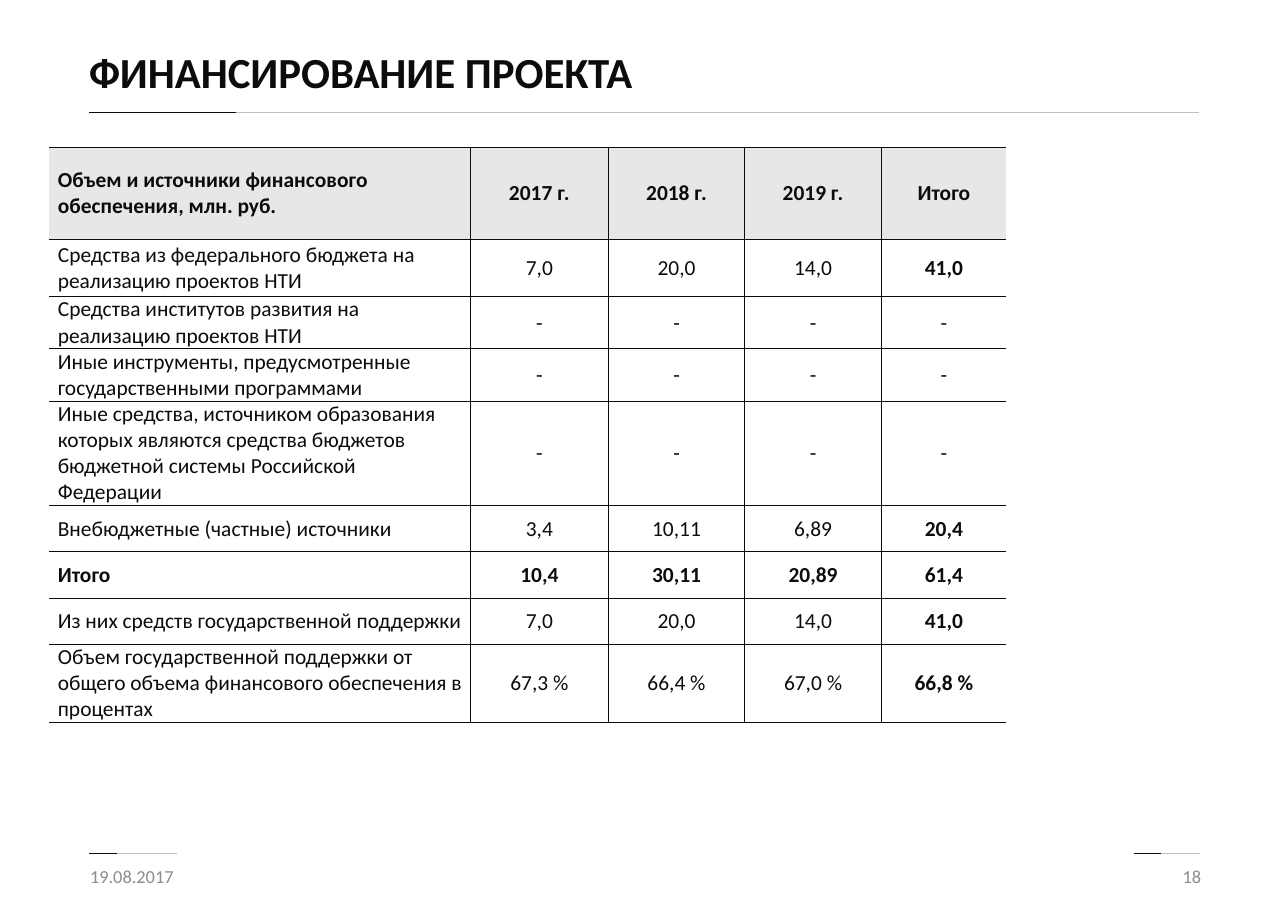
from lxml import etree
from pptx import Presentation
from pptx.dml.color import RGBColor
from pptx.enum.shapes import MSO_CONNECTOR
from pptx.enum.text import MSO_ANCHOR, PP_ALIGN
from pptx.oxml.ns import qn
from pptx.util import Pt

STRAIGHT = MSO_CONNECTOR.STRAIGHT
MIDDLE = MSO_ANCHOR.MIDDLE
LEFT, CENTER, RIGHT = PP_ALIGN.LEFT, PP_ALIGN.CENTER, PP_ALIGN.RIGHT

INK, PALE, MUTED, HEADER_FILL = "0C0C0C", "BFBFBF", "8C8C8C", "E7E7E7"
FONT = "Calibri"

COLUMN_WIDTHS = [275.4, 90.2, 89.1, 89.4, 81.6]
ROW_HEIGHTS = [60, 37.4, 34.2, 34.2, 68.4, 30.2, 30.2, 30.2, 51.3]
FUNDING = [
    ["Объем и источники финансового обеспечения, млн. руб.",
     "2017 г.", "2018 г.", "2019 г.", "Итого"],
    ["Средства из федерального бюджета на реализацию проектов НТИ",
     "7,0", "20,0", "14,0", "41,0"],
    ["Средства институтов развития на реализацию проектов НТИ", "-", "-", "-", "-"],
    ["Иные инструменты, предусмотренные государственными программами",
     "-", "-", "-", "-"],
    ["Иные средства, источником образования которых являются средства бюджетов "
     "бюджетной системы Российской Федерации", "-", "-", "-", "-"],
    ["Внебюджетные (частные) источники", "3,4", "10,11", "6,89", "20,4"],
    ["Итого", "10,4", "30,11", "20,89", "61,4"],
    ["Из них средств государственной поддержки", "7,0", "20,0", "14,0", "41,0"],
    ["Объем государственной поддержки от общего объема финансового обеспечения "
     "в процентах", "67,3 %", "66,4 %", "67,0 %", "66,8 %"],
]
BOLD_ROWS = (0, FUNDING.index(["Итого", "10,4", "30,11", "20,89", "61,4"]))


def color(hex_value):
    return RGBColor.from_string(hex_value)


def write(frame, text, hex_value, paragraph_format, **font_format):
    """Fill the first paragraph of a text frame and format it."""
    paragraph = frame.paragraphs[0]
    paragraph.text = text
    for name, value in paragraph_format.items():
        setattr(paragraph, name, value)
    font = paragraph.runs[0].font
    for name, value in {"name": FONT, **font_format}.items():
        setattr(font, name, value)
    font.color.rgb = color(hex_value)


def add_label(slide, box, text, hex_value, paragraph_format, **font_format):
    frame = slide.shapes.add_textbox(*map(Pt, box)).text_frame
    frame.word_wrap = True
    frame.vertical_anchor = MIDDLE
    write(frame, text, hex_value, paragraph_format, **font_format)


def add_two_tone_rule(slide, left, top, width, accent_width):
    """Draw a pale rule whose first part is dark."""
    for length, hex_value in ((width, PALE), (accent_width, INK)):
        rule = slide.shapes.add_connector(
            STRAIGHT, Pt(left), Pt(top), Pt(left + length), Pt(top))
        rule.line.color.rgb = color(hex_value)
        rule.line.width = Pt(0.5)
        etree.SubElement(rule._element.spPr, qn("a:effectLst"))


def set_borders(cell, widths):
    """Set left, right, top and bottom borders; a width of 0 hides the border."""
    properties = cell._tc.get_or_add_tcPr()
    for position, (side, width) in enumerate(zip("LRTB", widths)):
        border = etree.Element(qn(f"a:ln{side}"), w=str(Pt(width)))
        if width:
            fill = etree.SubElement(border, qn("a:solidFill"))
            etree.SubElement(fill, qn("a:srgbClr"), val=INK)
        else:
            etree.SubElement(border, qn("a:noFill"))
        properties.insert(position, border)


def add_heading(slide, left, top, width):
    add_label(slide, (left, top, 574, 57.6), "ФИНАНСИРОВАНИЕ ПРОЕКТА", INK,
              {"line_spacing": 0.9}, size=Pt(28), bold=True)
    add_two_tone_rule(slide, left + 7, top + 53.2, width, 96.2)


def add_funding_table(slide, left, top):
    table = slide.shapes.add_table(
        len(ROW_HEIGHTS), len(COLUMN_WIDTHS), Pt(left), Pt(top),
        Pt(sum(COLUMN_WIDTHS)), Pt(sum(ROW_HEIGHTS))).table
    table.first_row = table.horz_banding = False
    for column, width in zip(table.columns, COLUMN_WIDTHS):
        column.width = Pt(width)
    for row, height in zip(table.rows, ROW_HEIGHTS):
        row.height = Pt(height)

    last = len(COLUMN_WIDTHS) - 1
    for r, values in enumerate(FUNDING):
        for c, value in enumerate(values):
            cell = table.cell(r, c)
            cell_format = {"margin_left": Pt(5 if c else 5.8), "margin_right": Pt(5),
                           "margin_top": 0, "margin_bottom": 0,
                           "vertical_anchor": MIDDLE}
            for name, setting in cell_format.items():
                setattr(cell, name, setting)
            if r == 0:
                cell.fill.solid()
                cell.fill.fore_color.rgb = color(HEADER_FILL)
            else:
                cell.fill.background()
            set_borders(cell, (0.75 if c else 0, 0.75 if c < last else 0,
                               0.75 if r else 1, 0.75))
            bold = r in BOLD_ROWS or (c == last and value != "-")
            write(cell.text_frame, value, INK,
                  {"alignment": CENTER if c else LEFT, "space_after": Pt(6)},
                  size=Pt(14), bold=bold)


def add_footer(slide, left, top, width):
    label_width = 189.4
    add_two_tone_rule(slide, left + 6.5, top + 1.2, 57.4, 18)
    add_two_tone_rule(slide, left + width - 51, top + 1.2, 43.2, 18)
    for label_left, text, alignment in ((left, "19.08.2017", LEFT),
                                        (left + width - label_width, "18", RIGHT)):
        add_label(slide, (label_left, top, label_width, 31.7), text, MUTED,
                  {"alignment": alignment}, size=Pt(12))


def main():
    presentation = Presentation()
    presentation.slide_width, presentation.slide_height = Pt(841.7), Pt(595.4)
    slide = presentation.slides.add_slide(presentation.slide_layouts[6])
    add_heading(slide, 51.1, 20.2, 725.6)
    add_funding_table(slide, 32, 96.4)
    add_footer(slide, 51.8, 556.6, 740.2)
    presentation.save("out.pptx")


if __name__ == "__main__":
    main()
